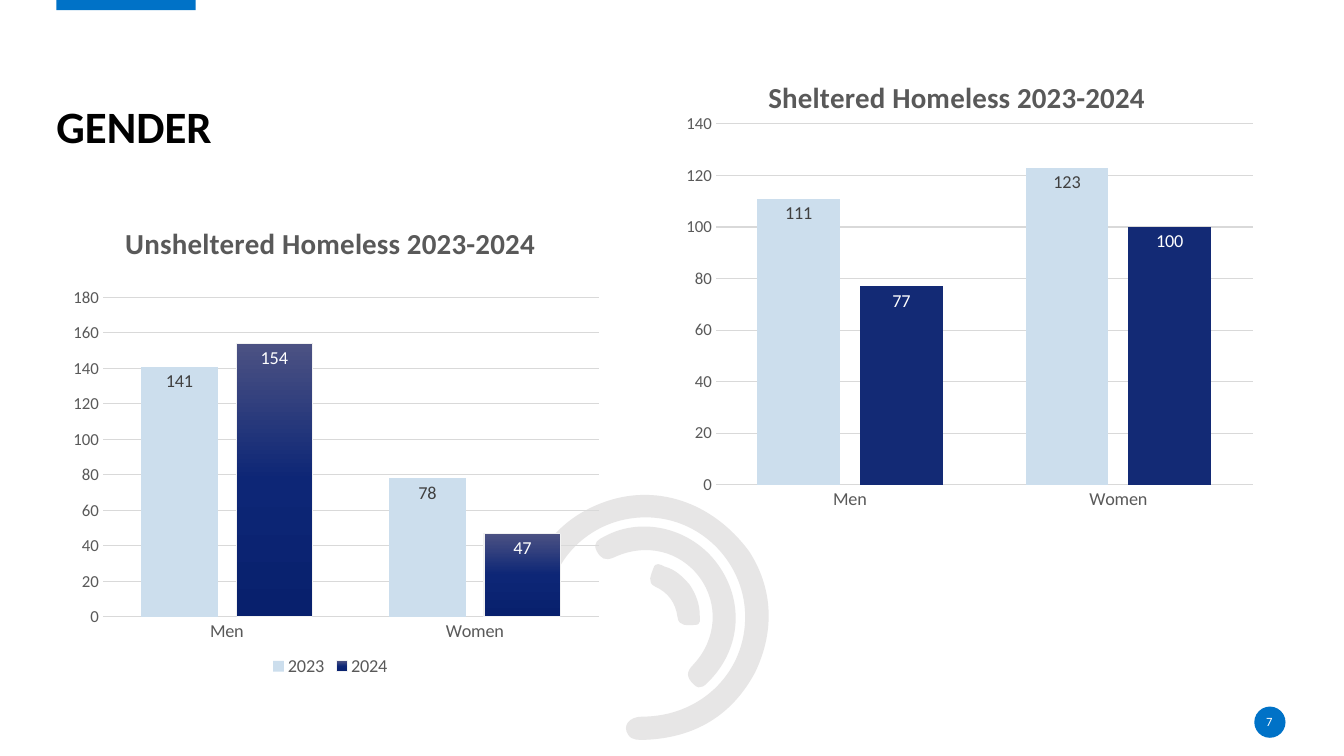
"""Build the gender slide with two clustered column charts."""
from copy import deepcopy

from lxml import etree
from pptx import Presentation
from pptx.chart.data import CategoryChartData
from pptx.dml.color import RGBColor
from pptx.enum.chart import XL_CHART_TYPE, XL_LABEL_POSITION, XL_LEGEND_POSITION, XL_TICK_MARK
from pptx.enum.shapes import MSO_SHAPE
from pptx.enum.text import MSO_ANCHOR, PP_ALIGN
from pptx.oxml.ns import qn
from pptx.util import Inches, Pt

COLUMNS = XL_CHART_TYPE.COLUMN_CLUSTERED
INSIDE_END = XL_LABEL_POSITION.INSIDE_END
BOTTOM = XL_LEGEND_POSITION.BOTTOM
NO_TICK = XL_TICK_MARK.NONE
RECTANGLE, OVAL = MSO_SHAPE.RECTANGLE, MSO_SHAPE.OVAL
MIDDLE = MSO_ANCHOR.MIDDLE
LEFT, CENTER = PP_ALIGN.LEFT, PP_ALIGN.CENTER

FONT = "Calibri"
BLUE, GRAY, GRID, ARC = "0072C7", "595959", "D9D9D9", "E7E6E6"
LABEL_COLORS = ["404040", "FFFFFF"]
CATEGORIES = ["Men", "Women"]
NAVY_GRADIENT = [(0, "4C5283"), (0.5, "0D2676"), (1, "08206D")]

CHARTS = [
    {"title": "Unsheltered Homeless 2023-2024", "box": (0.59, 2, 5.37, 4.76),
     "title_at": (0.6, 0.16), "plot": (0.43, 0.95, 4.92, 3.17), "top": 180, "legend": True,
     "series": [("2023", (141, 78), "CCDEED"), ("2024", (154, 47), NAVY_GRADIENT)]},
    {"title": "Sheltered Homeless 2023-2024", "box": (6.57, 0.55, 5.86, 4.88),
     "title_at": (1, 0.16), "plot": (0.53, 0.68, 5.33, 3.58), "top": 140, "legend": False,
     "series": [("Series 1", (111, 123), "CCDEED"), ("Series 2", (77, 100), "132A75")]},
]

ARCS = [
    ((7.43, 5.47), [
        (7.65, 5.81, 7.7, 6.23, 7.49, 6.67), (7.26, 7.1, 6.89, 7.32, 6.4, 7.34),
        (6.34, 7.34, 6.27, 7.35, 6.23, 7.29), (6.17, 7.2, 6.24, 7.11, 6.37, 7.11),
        (6.93, 7.11, 7.37, 6.7, 7.39, 6.16), (7.41, 5.67, 7.06, 5.24, 6.59, 5.15),
        (6.1, 5.06, 5.63, 5.33, 5.47, 5.8), (5.46, 5.81, 5.45, 5.83, 5.45, 5.85),
        (5.43, 5.94, 5.38, 5.97, 5.29, 5.95), (5.19, 5.92, 5.21, 5.84, 5.24, 5.78),
        (5.35, 5.4, 5.6, 5.13, 5.97, 4.99), (6.49, 4.79, 7.06, 4.97, 7.43, 5.47)]),
    ((7.12, 5.6), [
        (7.38, 5.96, 7.35, 6.42, 7.05, 6.74), (7, 6.79, 6.95, 6.86, 6.88, 6.79),
        (6.81, 6.72, 6.8, 6.67, 6.88, 6.59), (7.11, 6.34, 7.13, 5.99, 6.94, 5.73),
        (6.75, 5.47, 6.41, 5.38, 6.09, 5.53), (6, 5.57, 5.96, 5.54, 5.92, 5.47),
        (5.87, 5.38, 5.94, 5.35, 6, 5.32), (6.37, 5.12, 6.86, 5.24, 7.12, 5.6)]),
    ((6.84, 5.8), [
        (6.9, 5.89, 6.94, 5.99, 6.94, 6.1), (6.94, 6.14, 6.96, 6.2, 6.89, 6.2),
        (6.82, 6.2, 6.73, 6.22, 6.72, 6.12), (6.7, 5.98, 6.63, 5.88, 6.5, 5.82),
        (6.41, 5.78, 6.46, 5.7, 6.48, 5.64), (6.5, 5.57, 6.55, 5.6, 6.59, 5.62),
        (6.7, 5.65, 6.77, 5.72, 6.84, 5.8)]),
]


def rgb(color):
    return RGBColor.from_string(color)


def inches(values):
    return [Inches(value) for value in values]


def set_font(font, size, color, bold=False):
    font.name, font.size, font.bold = FONT, Pt(size), bold
    font.color.rgb = rgb(color)


def write_text(frame, text, size, color, bold=False, align=LEFT, spacing=None):
    frame.text = text
    paragraph = frame.paragraphs[0]
    paragraph.alignment = align
    paragraph.line_spacing = spacing
    set_font(paragraph.runs[0].font, size, color, bold)


def center_frame(frame):
    frame.margin_left = frame.margin_right = frame.margin_top = frame.margin_bottom = 0
    frame.vertical_anchor = MIDDLE
    frame.word_wrap = True


def paint(shape, color):
    shape.shadow.inherit = False
    shape.fill.solid()
    shape.fill.fore_color.rgb = rgb(color)
    shape.line.fill.background()


def add_arc(slide, start, curves):
    builder = slide.shapes.build_freeform(*inches(start))
    points = [curve[i:i + 2] for curve in curves for i in (0, 2, 4)]
    builder.add_line_segments([inches(point) for point in points], close=True)
    shape = builder.convert_to_shape()
    segments = shape._element.xpath(".//a:lnTo")
    for first in range(0, len(segments), 3):
        curve = etree.Element(qn("a:cubicBezTo"))
        segments[first].addprevious(curve)
        for segment in segments[first:first + 3]:
            curve.append(segment[0])
            segment.getparent().remove(segment)
    paint(shape, ARC)


def set_layout(parent, index, place, box, inner=False):
    for old in parent.findall(qn("c:layout")):
        parent.remove(old)
    layout = etree.Element(qn("c:layout"))
    manual = etree.SubElement(layout, qn("c:manualLayout"))
    settings = [("layoutTarget", "inner")] if inner else []
    settings += [("xMode", "edge"), ("yMode", "edge")]
    sizes = box[2:] * 2
    settings += [(name, length / size) for name, length, size in zip("xywh", place, sizes)]
    for name, value in settings:
        etree.SubElement(manual, qn(f"c:{name}")).set("val", str(value))
    parent.insert(index, layout)


def fill_series(series, color):
    fill = series.format.fill
    if isinstance(color, str):
        fill.solid()
        fill.fore_color.rgb = rgb(color)
        return
    fill.gradient()
    fill.gradient_angle = 270
    stop_list = series._element.xpath(".//a:gsLst")[0]
    stop_list.append(deepcopy(stop_list[0]))
    for stop, (position, shade) in zip(fill.gradient_stops, color):
        stop.position = position
        stop.color.rgb = rgb(shade)
    series.format.line.color.rgb = rgb("F2F2F2")
    series.format.line.width = Pt(0.75)


def format_axes(chart, top):
    category, value = chart.category_axis, chart.value_axis
    for axis, size in ((category, 13), (value, 12)):
        axis.major_tick_mark = axis.minor_tick_mark = NO_TICK
        set_font(axis.tick_labels.font, size, GRAY)
    category.format.line.color.rgb = rgb(GRID)
    category.format.line.width = Pt(1)
    value.format.line.fill.background()
    value.minimum_scale, value.maximum_scale, value.major_unit = 0, top, 20
    value.major_gridlines.format.line.color.rgb = rgb(GRID)
    value.major_gridlines.format.line.width = Pt(0.75)


def add_column_chart(slide, content):
    data = CategoryChartData()
    data.categories = CATEGORIES
    for name, values, _ in content["series"]:
        data.add_series(name, values)
    box = content["box"]
    chart = slide.shapes.add_chart(COLUMNS, *inches(box), data).chart
    set_font(chart.font, 10, "000000")
    write_text(chart.chart_title.text_frame, content["title"], size=20.7, color=GRAY,
               bold=True, align=CENTER)
    set_layout(chart.chart_title._element, 1, content["title_at"], box)
    set_layout(chart._chartSpace.chart.plotArea, 0, content["plot"], box, inner=True)
    format_axes(chart, content["top"])
    plot = chart.plots[0]
    plot.gap_width, plot.overlap, plot.vary_by_categories = 100, -24, False
    for series, (_, _, color), label_color in zip(plot.series, content["series"], LABEL_COLORS):
        fill_series(series, color)
        labels = series.data_labels
        labels.show_value, labels.position = True, INSIDE_END
        set_font(labels.font, 13, label_color)
    chart.has_legend = content["legend"]
    if content["legend"]:
        chart.legend.position = BOTTOM
        chart.legend.include_in_layout = False
        set_font(chart.legend.font, 13, GRAY)


def main():
    presentation = Presentation()
    presentation.slide_width, presentation.slide_height = inches((13.33, 7.5))
    slide = presentation.slides.add_slide(presentation.slide_layouts[5])
    title = slide.shapes.title
    title.left, title.top, title.width, title.height = inches((0.56, 0.55, 5.4, 1.45))
    center_frame(title.text_frame)
    write_text(title.text_frame, "GENDER", size=32, color="000000", bold=True, spacing=0.9)
    paint(slide.shapes.add_shape(RECTANGLE, *inches((0.56, 0, 1.38, 0.1))), BLUE)
    for start, curves in ARCS:
        add_arc(slide, start, curves)
    paint(slide.shapes.add_shape(OVAL, *inches((12.44, 7.01, 0.31, 0.31))), BLUE)
    number = slide.shapes.add_textbox(*inches((12.43, 7.06, 0.32, 0.2))).text_frame
    center_frame(number)
    write_text(number, "7", size=9, color="FFFFFF", align=CENTER)
    for content in CHARTS:
        add_column_chart(slide, content)
    presentation.save("out.pptx")


if __name__ == "__main__":
    main()
